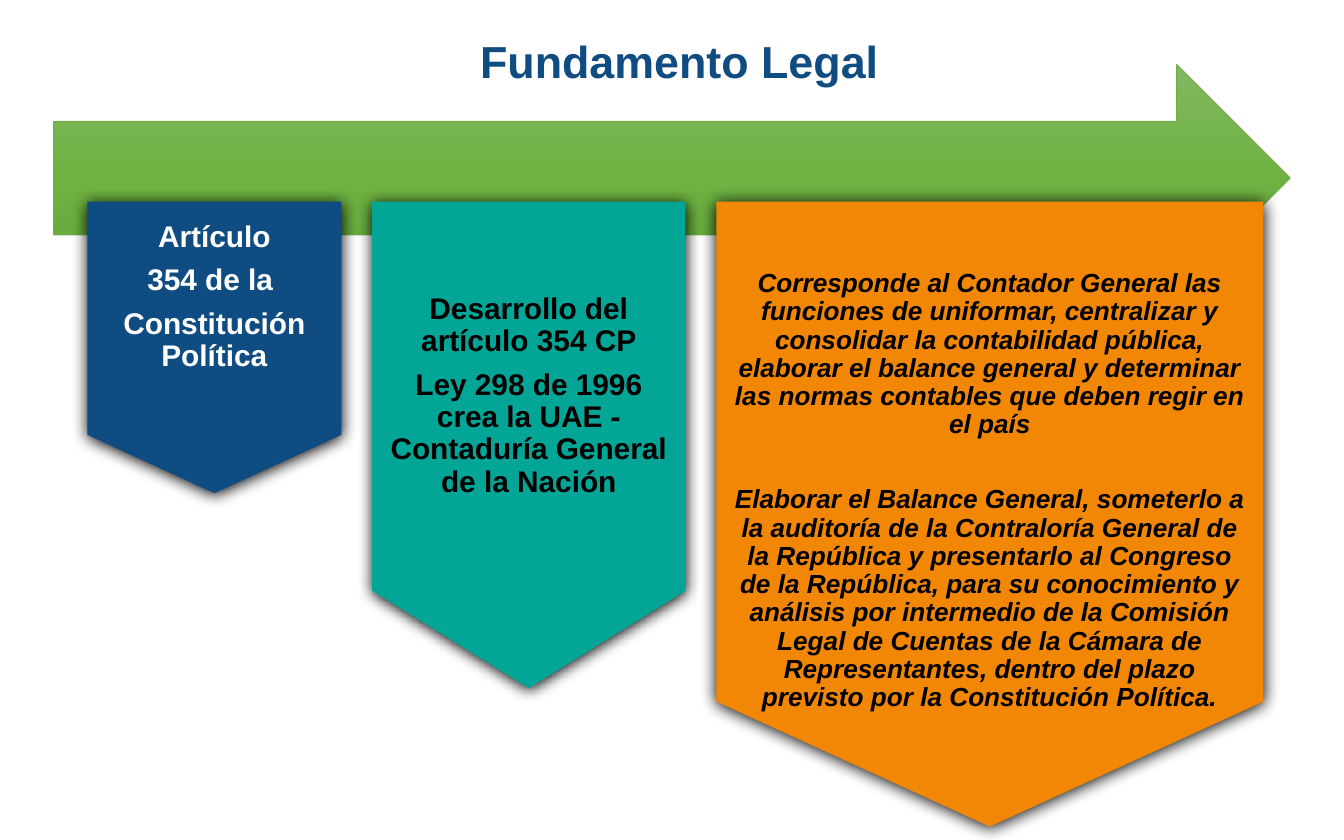
from pptx import Presentation
from pptx.dml.color import RGBColor
from pptx.enum.shapes import MSO_SHAPE
from pptx.enum.text import MSO_ANCHOR, PP_ALIGN
from pptx.oxml import parse_xml
from pptx.oxml.ns import nsdecls, qn
from pptx.util import Inches, Pt

BLUE = "0F4C81"
TOP = 1.5


def rgb(value):
    return RGBColor.from_string(value)


def write(tf, paragraphs, size, color, italic=False, gap=0):
    tf.word_wrap = True
    for i, text in enumerate(paragraphs):
        p = tf.paragraphs[0] if i == 0 else tf.add_paragraph()
        p.text = text
        p.alignment = PP_ALIGN.CENTER
        p.line_spacing = 0.9
        p.space_after = Pt(gap)
        p.font.name = "Arial"
        p.font.size = Pt(size)
        p.font.bold = True
        p.font.italic = italic
        p.font.color.rgb = rgb(color)


def add_shadow(sp):
    sp.shadow.inherit = False
    effects = sp._element.spPr.find(qn("a:effectLst"))
    effects.append(parse_xml(
        f'<a:outerShdw {nsdecls("a")} blurRad="{Pt(8.5)}" dist="{Pt(1)}" '
        'dir="5400000" algn="ctr" rotWithShape="0">'
        '<a:srgbClr val="000000"/></a:outerShdw>'))


def add_arrow(s, left, top, width, height, stops, line):
    sp = s.shapes.add_shape(MSO_SHAPE.RIGHT_ARROW, Inches(left), Inches(top),
                            Inches(width), Inches(height))
    sp.shadow.inherit = False
    sp.fill.gradient()
    sp.fill.gradient_angle = 270
    gs_list = sp._element.spPr.find(qn("a:gradFill")).find(qn("a:gsLst"))
    for gs in list(gs_list):
        gs_list.remove(gs)
    for position, color in stops:
        gs_list.append(parse_xml(
            f'<a:gs {nsdecls("a")} pos="{position * 1000}">'
            f'<a:srgbClr val="{color}"/></a:gs>'))
    sp.line.color.rgb = rgb(line)
    sp.line.width = Pt(0.5)


def add_banner(s, left, width, height, fill, paragraphs, size, color,
               inset=None, italic=False, gap=6):
    sp = s.shapes.add_shape(MSO_SHAPE.FLOWCHART_OFFPAGE_CONNECTOR, Inches(left),
                            Inches(TOP), Inches(width), Inches(height))
    sp.fill.solid()
    sp.fill.fore_color.rgb = rgb(fill)
    sp.line.fill.background()
    add_shadow(sp)
    tf = sp.text_frame
    tf.vertical_anchor = MSO_ANCHOR.MIDDLE
    if inset is not None:
        tf.vertical_anchor = MSO_ANCHOR.TOP
        tf.margin_top = Inches(inset)
    write(tf, paragraphs, size, color, italic, gap)


def add_title(s, text):
    sp = s.shapes.add_textbox(Inches(0.88), Inches(0.2), Inches(8.44), Inches(0.56))
    sp.text_frame.vertical_anchor = MSO_ANCHOR.MIDDLE
    write(sp.text_frame, [text], 24, BLUE)


def main():
    prs = Presentation()
    prs.slide_width, prs.slide_height = Inches(10), Inches(6.25)
    s = prs.slides.add_slide(prs.slide_layouts[6])
    add_arrow(s, 0.4, 0.48, 9.2, 1.69,
              [(0, "81B861"), (50, "6FB242"), (100, "62A336")], "70AD47")
    add_banner(s, 0.65, 1.89, 2.17, BLUE,
               ["Artículo", "354 de la ", "Constitución Política"],
               16, "FFFFFF", inset=0.15)
    add_banner(s, 2.77, 2.33, 3.62, "03A696",
               ["Desarrollo del artículo 354 CP",
                "Ley 298 de 1996 crea la UAE - Contaduría General de la Nación"],
               16, "000000")
    add_banner(s, 5.33, 4.07, 4.65, "F28705",
               ["Corresponde al Contador General las funciones de uniformar, "
                "centralizar y consolidar la contabilidad pública, elaborar el "
                "balance general y determinar las normas contables que deben "
                "regir en el país",
                "Elaborar el Balance General, someterlo a la auditoría de la "
                "Contraloría General de la República y presentarlo al Congreso "
                "de la República, para su conocimiento y análisis por intermedio "
                "de la Comisión Legal de Cuentas de la Cámara de Representantes, "
                "dentro del plazo previsto por la Constitución Política."],
               14, "000000", inset=0.51, italic=True, gap=25)
    add_title(s, "Fundamento Legal ")
    prs.save("out.pptx")


if __name__ == "__main__":
    main()
